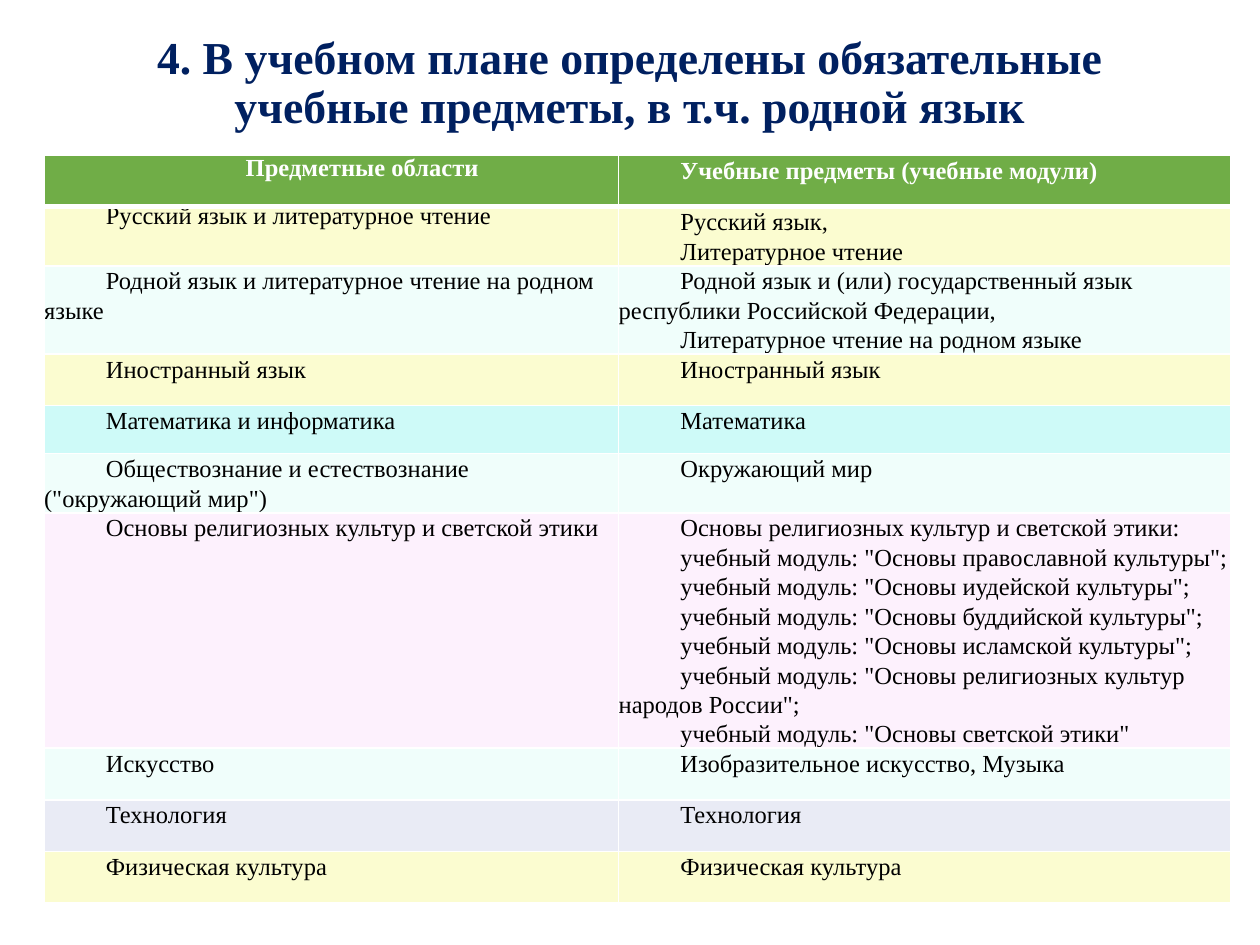
from lxml.etree import SubElement
from pptx import Presentation
from pptx.dml.color import RGBColor
from pptx.enum.text import MSO_ANCHOR, PP_ALIGN
from pptx.oxml import parse_xml
from pptx.oxml.ns import nsdecls
from pptx.util import Inches, Pt

FONT = "Times New Roman"
WHITE, BLACK, NAVY, GREEN = "FFFFFF", "000000", "002060", "70AD47"
YELLOW, MINT, AQUA, PINK, GREY = "FBFCD0", "F0FEFB", "CEFAF8", "FDF1FD", "E9EBF5"


def color(hex_value):
    return RGBColor.from_string(hex_value)


def add_borders(cell, bottom_width):
    """Draw white lines on all four sides of a cell."""
    sides = [("lnL", 1), ("lnR", 1), ("lnT", 1), ("lnB", bottom_width)]
    for position, (side, width) in enumerate(sides):
        line = parse_xml(
            f'<a:{side} {nsdecls("a")} w="{Pt(width)}"><a:solidFill>'
            f'<a:srgbClr val="{WHITE}"/></a:solidFill></a:{side}>'
        )
        cell._tc.get_or_add_tcPr().insert(position, line)


presentation = Presentation()
presentation.slide_width = Inches(10)
presentation.slide_height = Inches(7.5)
slide = presentation.slides.add_slide(presentation.slide_layouts[5])

# Title
title = slide.shapes.title
title.left, title.top = Inches(0.69), Inches(0.17)
title.width, title.height = Inches(8.62), Inches(1.3)
title.fill.solid()
title.fill.fore_color.rgb = color(WHITE)
text_frame = title.text_frame
text_frame.text = "4. В учебном плане определены обязательные учебные предметы, в т.ч. родной язык"
text_frame.word_wrap = True
text_frame.vertical_anchor = MSO_ANCHOR.MIDDLE
text_frame.margin_bottom = Inches(0.35)
paragraph = text_frame.paragraphs[0]
paragraph.alignment = PP_ALIGN.CENTER
paragraph.line_spacing = 0.9
font = paragraph.runs[0].font
font.name, font.size, font.bold = FONT, Pt(26.1), True
font.color.rgb = color(NAVY)

# Table rows: height, fill, subject area, subjects
rows = [
    (0.41, GREEN, "Предметные области", "Учебные предметы (учебные модули)"),
    (0.47, YELLOW, "Русский язык и литературное чтение",
     "Русский язык,\nЛитературное чтение"),
    (0.7, MINT, "Родной язык и литературное чтение на родном языке",
     "Родной язык и (или) государственный язык республики Российской Федерации,\n"
     "Литературное чтение на родном языке"),
    (0.41, YELLOW, "Иностранный язык", "Иностранный язык"),
    (0.38, AQUA, "Математика и информатика", "Математика"),
    (0.47, MINT, 'Обществознание и естествознание ("окружающий мир")', "Окружающий мир"),
    (1.86, PINK, "Основы религиозных культур и светской этики",
     "Основы религиозных культур и светской этики:\n"
     'учебный модуль: "Основы православной культуры";\n'
     'учебный модуль: "Основы иудейской культуры";\n'
     'учебный модуль: "Основы буддийской культуры";\n'
     'учебный модуль: "Основы исламской культуры";\n'
     'учебный модуль: "Основы религиозных культур народов России";\n'
     'учебный модуль: "Основы светской этики"'),
    (0.41, MINT, "Искусство", "Изобразительное искусство, Музыка"),
    (0.41, GREY, "Технология", "Технология"),
    (0.41, YELLOW, "Физическая культура", "Физическая культура"),
]
table = slide.shapes.add_table(
    len(rows), 2, Inches(0.35), Inches(1.23), Inches(9.42), Inches(5.93)
).table
table.horz_banding = False
table.columns[0].width = Inches(4.56)
table.columns[1].width = Inches(4.86)

for row_index, (height, fill, *texts) in enumerate(rows):
    table.rows[row_index].height = Inches(height)
    is_header = row_index == 0
    for column_index, text in enumerate(texts):
        cell = table.cell(row_index, column_index)
        cell.margin_left = cell.margin_right = cell.margin_top = cell.margin_bottom = 0
        cell.fill.solid()
        cell.fill.fore_color.rgb = color(fill)
        add_borders(cell, 3 if is_header else 1)
        cell.text_frame.text = text
        for paragraph in cell.text_frame.paragraphs:
            paragraph._p.get_or_add_pPr().set("indent", str(Inches(0.49)))
            paragraph.line_spacing = Pt(16.8)
            font = paragraph.runs[0].font
            font.name, font.size, font.bold = FONT, Pt(14), is_header
            font.color.rgb = color(WHITE if is_header else BLACK)

# Two first-column cells have their own alignment and spacing
header = table.cell(0, 0).text_frame.paragraphs[0]
header.alignment = PP_ALIGN.CENTER
header.line_spacing = None
russian = table.cell(1, 0).text_frame.paragraphs[0]
russian.alignment = PP_ALIGN.JUSTIFY
russian.line_spacing = Pt(13.4)

presentation.save("out.pptx")
